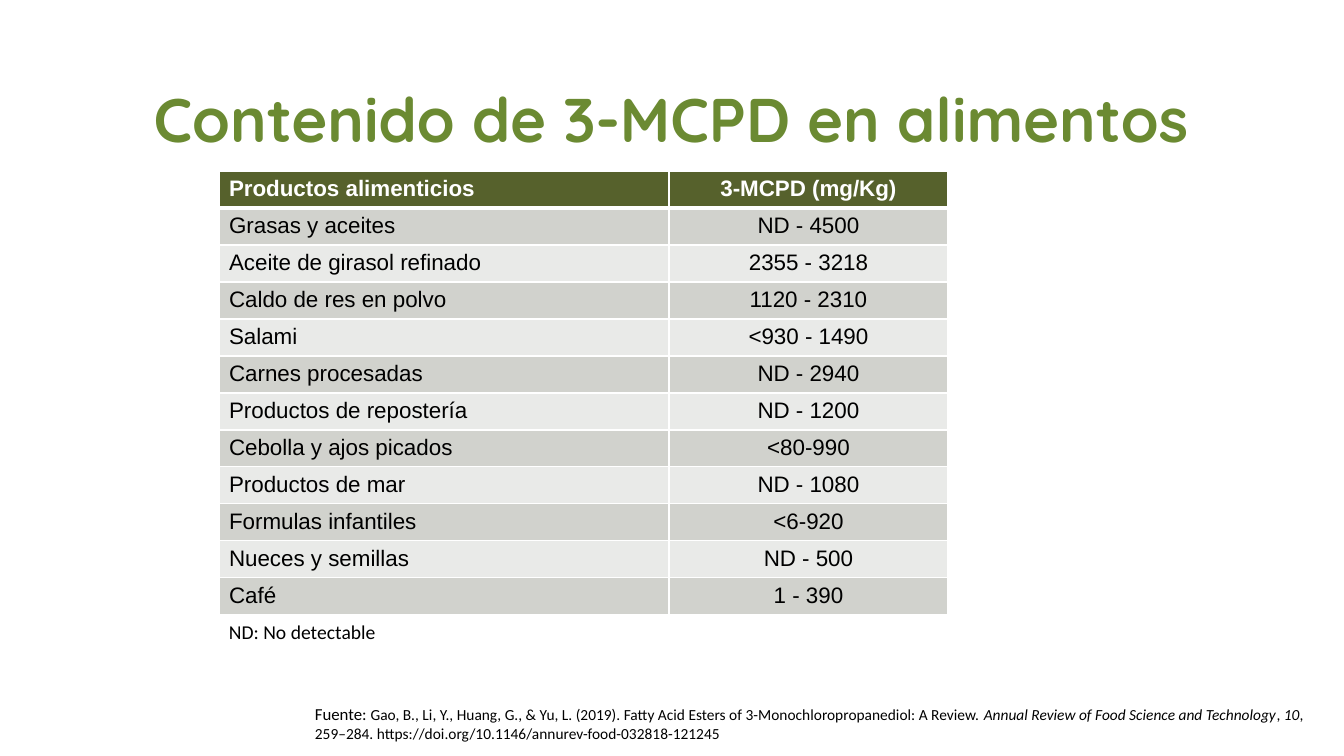
from dataclasses import dataclass
from lxml.etree import SubElement
from pptx import Presentation
from pptx.dml.color import RGBColor as Rgb
from pptx.enum.text import MSO_ANCHOR as Anchor, MSO_AUTO_SIZE as Fit, PP_ALIGN as Align
from pptx.oxml.ns import qn
from pptx.util import Pt

TITLE = "Contenido de 3-MCPD en alimentos"
ROWS = [
    ("Productos alimenticios", "3-MCPD (mg/Kg)"),
    ("Grasas y aceites", "ND - 4500"),
    ("Aceite de girasol refinado", "2355 - 3218"),
    ("Caldo de res en polvo", "1120 - 2310"),
    ("Salami", "<930 - 1490"),
    ("Carnes procesadas", "ND - 2940"),
    ("Productos de repostería", "ND - 1200"),
    ("Cebolla y ajos picados", "<80-990"),
    ("Productos de mar", "ND - 1080"),
    ("Formulas infantiles", "<6-920"),
    ("Nueces y semillas", "ND - 500"),
    ("Café", "1 - 390"),
]
NOTE = "ND: No detectable"
LABEL = "Fuente: "
SOURCE = [  # text, italic
    ("Gao, B., Li, Y., Huang, G., & Yu, L. (2019). Fatty Acid Esters of "
     "3-Monochloropropanediol: A Review. ", False),
    ("Annual Review of Food Science and Technology", True),
    (", ", False),
    ("10", True),
    (", 259–284. https://doi.org/10.1146/annurev-food-032818-121245", False),
]


@dataclass(frozen=True)
class Theme:
    green: str = "6B8A32"
    head: str = "56612C"
    bands: tuple = ("E9EAE8", "D1D2CD")
    white: str = "FFFFFF"
    black: str = "000000"
    title: int = 44
    cell: int = 16
    note: int = 14
    label: int = 12
    source: int = 11


LOOK = Theme()
SCALE = 914400 / 100.8
SLIDE = (1344, 756)
TITLE_BOX = (92, 73, 1159, 99)
COLS = (450, 279)
ROW = 37
GRID = (219, 171, sum(COLS), ROW * len(ROWS))
NOTE_BOX = (219, GRID[1] + GRID[3], 174, 34)
SOURCE_BOX = (305, 699, 1038, 49)


def px(*sizes):
    return [round(size * SCALE) for size in sizes]


def style(font, name, size, color, **flags):
    form = {"name": name, "size": Pt(size), **flags}
    for key, value in form.items():
        setattr(font, key, value)
    font.color.rgb = Rgb.from_string(color)


def edge(cell, widths):
    """Draw white borders: left, right, top, bottom, in points."""
    props = cell._tc.get_or_add_tcPr()
    for spot, (side, width) in enumerate(zip("LRTB", widths)):
        line = SubElement(props, qn(f"a:ln{side}"), w=str(Pt(width)))
        fill = SubElement(line, qn("a:solidFill"))
        SubElement(fill, qn("a:srgbClr"), val=LOOK.white)
        props.insert(spot, line)


def add_title(slide):
    title = slide.shapes.title
    title.left, title.top, title.width, title.height = px(*TITLE_BOX)
    frame = title.text_frame
    frame.text = TITLE
    frame.vertical_anchor = Anchor.MIDDLE
    para = frame.paragraphs[0]
    para.alignment, para.line_spacing = Align.CENTER, 0.9
    style(para.runs[0].font, "Quicksand", LOOK.title, LOOK.green, bold=True)


def add_grid(slide):
    table = slide.shapes.add_table(len(ROWS), len(COLS), *px(*GRID)).table
    for col, width in zip(table.columns, px(*COLS)):
        col.width = width
    for r, texts in enumerate(ROWS):
        table.rows[r].height = px(ROW)[0]
        head = r == 0
        for c, text in enumerate(texts):
            cell = table.cell(r, c)
            cell.text = text
            cell.fill.solid()
            shade = LOOK.head if head else LOOK.bands[r % 2]
            cell.fill.fore_color.rgb = Rgb.from_string(shade)
            edge(cell, (1, 1, 3 if r == 1 else 1, 3 if head else 1))
            para = cell.text_frame.paragraphs[0]
            para.alignment = Align.CENTER if c else Align.LEFT
            ink = LOOK.white if head else LOOK.black
            style(para.runs[0].font, "Arial", LOOK.cell, ink, bold=head)


def add_text(slide, box, runs):
    """Add a text box from (text, size, italic) runs."""
    frame = slide.shapes.add_textbox(*px(*box)).text_frame
    frame.word_wrap, frame.auto_size = True, Fit.SHAPE_TO_FIT_TEXT
    for text, size, italic in runs:
        run = frame.paragraphs[0].add_run()
        run.text = text
        style(run.font, "Calibri", size, LOOK.black, italic=italic)


def main():
    deck = Presentation()
    deck.slide_width, deck.slide_height = px(*SLIDE)
    slide = deck.slides.add_slide(deck.slide_layouts[5])
    add_title(slide)
    add_grid(slide)
    add_text(slide, NOTE_BOX, [(NOTE, LOOK.note, False)])
    cite = [(text, LOOK.source, italic) for text, italic in SOURCE]
    add_text(slide, SOURCE_BOX, [(LABEL, LOOK.label, False), *cite])
    deck.save("out.pptx")


if __name__ == "__main__":
    main()
